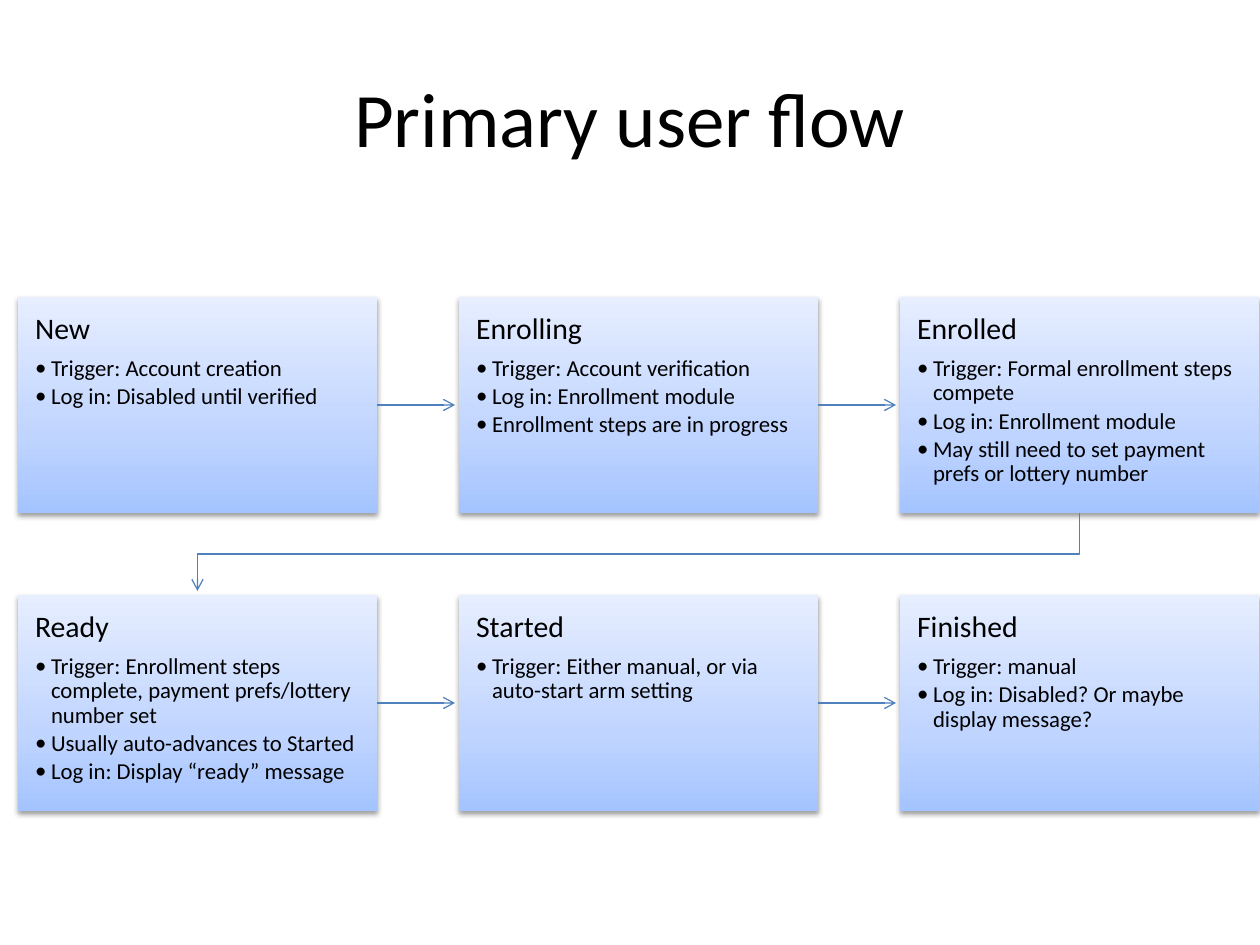
from copy import deepcopy

from lxml import etree
from pptx import Presentation
from pptx import util as u
from pptx.dml.color import RGBColor
from pptx.enum import shapes, text
from pptx.oxml import ns

PX = 914400 / 126
BLACK = RGBColor(0x00, 0x00, 0x00)
ARROW_BLUE = RGBColor(0x4F, 0x81, 0xBD)
CARD_STOPS = [
    (0, RGBColor(0xA4, 0xC4, 0xFF)),
    (0.35, RGBColor(0xBF, 0xD4, 0xFF)),
    (1, RGBColor(0xE6, 0xEE, 0xFF)),
]

LEFT, TOP = 18, 297
CARD_W, CARD_H = 359, 216
STEP_X, STEP_Y = 441, 298
COLUMNS = 3
TIP_GAP = 4

STATES = [
    ("New", ["Trigger: Account creation", "Log in: Disabled until verified"]),
    ("Enrolling", ["Trigger: Account verification", "Log in: Enrollment module",
                   "Enrollment steps are in progress"]),
    ("Enrolled", ["Trigger: Formal enrollment steps compete", "Log in: Enrollment module",
                  "May still need to set payment prefs or lottery number"]),
    ("Ready", ["Trigger: Enrollment steps complete, payment prefs/lottery number set",
               "Usually auto-advances to Started", "Log in: Display “ready” message"]),
    ("Started", ["Trigger: Either manual, or via auto-start arm setting"]),
    ("Finished", ["Trigger: manual", "Log in: Disabled? Or maybe display message?"]),
]


def px(length):
    """Turn a length in px into EMU."""
    return u.Emu(round(length * PX))


def add_xml(parent, tag, **attributes):
    """Append a drawing element to a parent and return it."""
    values = {name: str(value) for name, value in attributes.items()}
    return etree.SubElement(parent, ns.qn(tag), values)


def write(para, words, size, align=text.PP_ALIGN.LEFT, spacing=None, after=None, bullet=False):
    """Write one formatted span into a paragraph."""
    para.alignment = align
    para.line_spacing = spacing
    para.space_after = None if after is None else u.Pt(after)
    if bullet:
        props = para._p.get_or_add_pPr()
        props.set("marL", str(px(16)))
        props.set("indent", str(px(-16)))
        add_xml(props, "a:buFont", typeface="Calibri")
        add_xml(props, "a:buChar", char="•")
    span = para.add_run()
    span.text = words
    span.font.size = u.Pt(size)
    span.font.name = "Calibri"
    span.font.color.rgb = BLACK


def add_title(page, left, top, width, height, words):
    """Place the title placeholder in its box and fill it."""
    title = page.shapes.title
    title.left, title.top, title.width, title.height = map(px, (left, top, width, height))
    title.text_frame.vertical_anchor = text.MSO_ANCHOR.MIDDLE
    write(title.text_frame.paragraphs[0], words, 44, align=text.PP_ALIGN.CENTER)


def paint_card(card):
    """Give a card its three-stop gradient and soft shadow."""
    card.line.fill.background()
    card.fill.gradient()
    card.fill.gradient_angle = 90
    first = card.element.spPr.find(".//" + ns.qn("a:gs"))
    first.addnext(deepcopy(first))
    for stop, (position, color) in zip(card.fill.gradient_stops, CARD_STOPS):
        stop.position = position
        stop.color.rgb = color
    card.shadow.inherit = False
    effects = card.element.spPr.find(ns.qn("a:effectLst"))
    shadow = add_xml(effects, "a:outerShdw", blurRad=u.Pt(3.1), dist=u.Pt(1.6),
                     dir=5400000, rotWithShape=0)
    shade = add_xml(shadow, "a:srgbClr", val=BLACK)
    add_xml(shade, "a:alpha", val=38000)


def add_card(page, left, top, width, height, heading, notes):
    """Draw one state card with its heading and bullets."""
    card = page.shapes.add_shape(shapes.MSO_SHAPE.RECTANGLE, *map(px, (left, top, width, height)))
    paint_card(card)
    frame = card.text_frame
    frame.word_wrap = True
    frame.vertical_anchor = text.MSO_ANCHOR.TOP
    frame.margin_left = frame.margin_right = px(17)
    frame.margin_top = frame.margin_bottom = px(17)
    write(frame.paragraphs[0], heading, 17, spacing=0.9, after=6)
    for note in notes:
        write(frame.add_paragraph(), note, 13, spacing=0.9, after=2, bullet=True)
    return card


def style_arrow(arrow):
    """Format a line with an open arrowhead at its end."""
    arrow.line.color.rgb = ARROW_BLUE
    arrow.line.width = u.Pt(0.75)
    add_xml(arrow.line._get_or_add_ln(), "a:tailEnd", type="arrow")


def add_side_arrow(page, source, target):
    """Draw a straight arrow from one card towards the next in its row."""
    middle = source.top + source.height // 2
    arrow = page.shapes.add_connector(shapes.MSO_CONNECTOR.STRAIGHT, source.left + source.width,
                                      middle, target.left - px(TIP_GAP), middle)
    arrow.begin_connect(source, 3)
    style_arrow(arrow)
    add_xml(arrow.element.spPr, "a:effectLst")


def add_return_arrow(page, source, target):
    """Draw the bent arrow from the end of one row to the start of the next."""
    start_x = source.left + source.width // 2
    end_x = target.left + target.width // 2
    bottom = source.top + source.height
    bend = (bottom + target.top) // 2
    builder = page.shapes.build_freeform(start_x, bottom)
    builder.add_line_segments(
        [(start_x, bend), (end_x, bend), (end_x, target.top - px(TIP_GAP))], close=False)
    arrow = builder.convert_to_shape()
    arrow.fill.background()
    style_arrow(arrow)
    arrow.shadow.inherit = False


def add_flow(page, left, top):
    """Lay the state cards out in rows and link them in order."""
    cards = []
    for index, (heading, notes) in enumerate(STATES):
        row, column = divmod(index, COLUMNS)
        cards.append(add_card(page, left + column * STEP_X, top + row * STEP_Y,
                              CARD_W, CARD_H, heading, notes))
    for source, target in zip(cards, cards[1:]):
        link = add_side_arrow if source.top == target.top else add_return_arrow
        link(page, source, target)


def main():
    """Build the deck and save it."""
    deck = Presentation()
    deck.slide_width, deck.slide_height = px(1260), px(945)
    page = deck.slides.add_slide(deck.slide_layouts[5])
    add_title(page, 63, 38, 1134, 157, "Primary user flow")
    add_flow(page, LEFT, TOP)
    deck.save("out.pptx")


if __name__ == "__main__":
    main()
